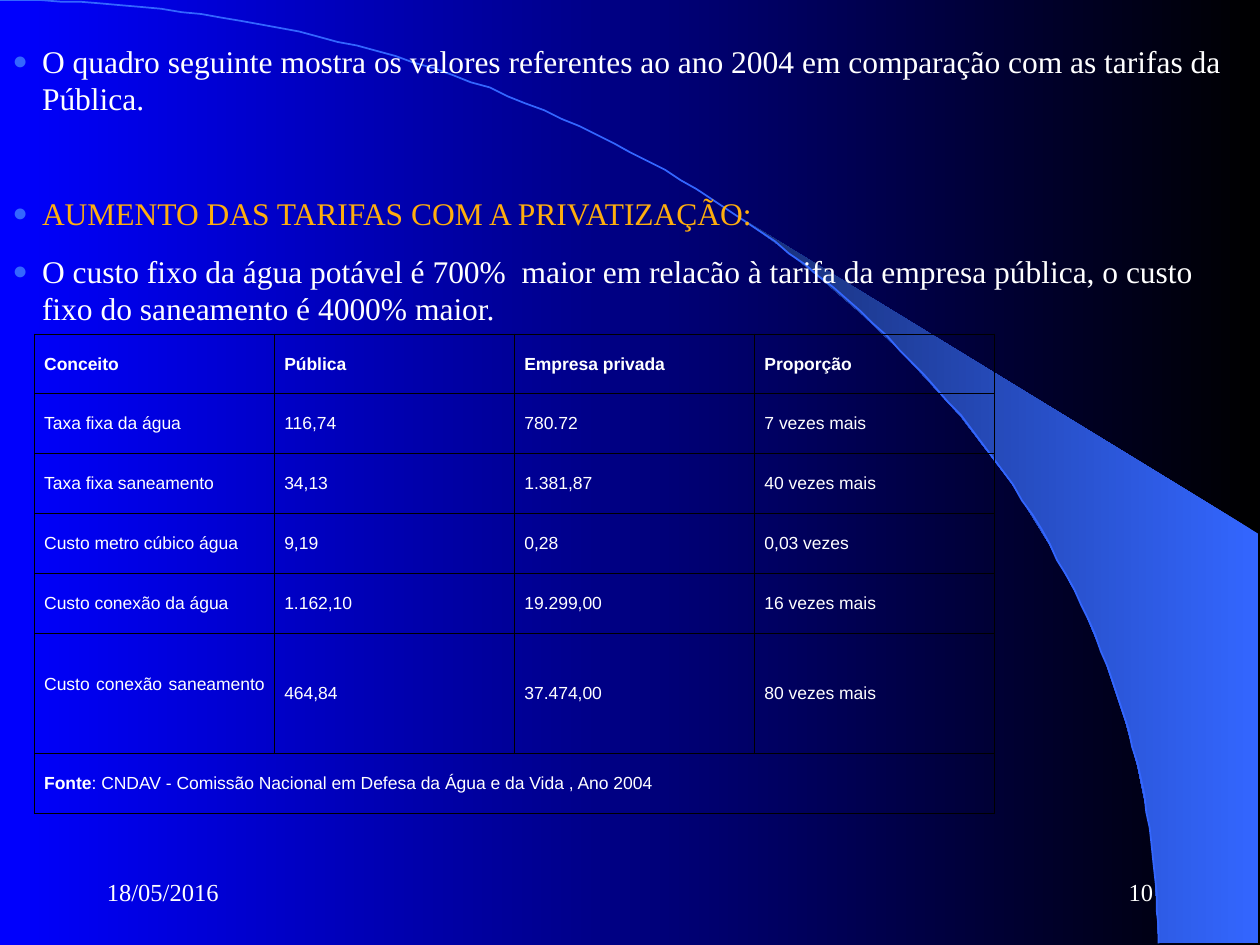
import math
from dataclasses import dataclass

import lxml.etree
import pptx
import pptx.dml.color
import pptx.enum.text
import pptx.oxml
import pptx.oxml.ns
import pptx.util

Pt = pptx.util.Pt
Align = pptx.enum.text.PP_ALIGN
Anchor = pptx.enum.text.MSO_ANCHOR
qn = pptx.oxml.ns.qn

WIDTH, HEIGHT = 720, 540
WHITE, BLACK, BLUE, ORANGE = "FFFFFF", "000000", "3366FF", "FFAE0D"
SERIF, SANS = "Times New Roman", "Arial"


@dataclass
class Bullet:
    text: str
    color: str = WHITE
    space_before: float = 11.2


@dataclass
class FooterText:
    text: str
    left: float
    alignment: Align


BULLETS = [
    Bullet("O quadro seguinte mostra os valores referentes ao ano 2004 em comparação "
           "com as tarifas da Pública."),
    Bullet("AUMENTO DAS TARIFAS COM A PRIVATIZAÇÃO:", ORANGE, 44),
    Bullet("O custo fixo da água potável é 700%  maior em relacão à tarifa da empresa "
           "pública, o custo fixo do saneamento é 4000% maior."),
]
FOOTERS = [
    FooterText("18/05/2016", 54, Align.LEFT),
    FooterText("10", 516, Align.RIGHT),
]
TARIFFS = [
    ("Conceito", "Pública", "Empresa privada", "Proporção"),
    ("Taxa fixa da água", "116,74", "780.72", "7 vezes mais"),
    ("Taxa fixa saneamento", "34,13", "1.381,87", "40 vezes mais"),
    ("Custo metro cúbico água", "9,19", "0,28", "0,03 vezes"),
    ("Custo conexão da água", "1.162,10", "19.299,00", "16 vezes mais"),
    ("Custo conexão saneamento\v", "464,84", "37.474,00", "80 vezes mais"),
]
SOURCE_LABEL = "Fonte"
SOURCE_TEXT = ": CNDAV - Comissão Nacional em Defesa da Água e da Vida , Ano 2004"
COLUMN_WIDTH, ROW_HEIGHT = 137.2, 34.29

ARC_RADIUS_X, ARC_RADIUS_Y = 661.7, 538.6
BEAM_POINTS = [
    (662.4, 538.6), (718.6, 538.6), (718.6, 304.6), (424.1, 124.6), (449.3, 143.3),
    (470.2, 159.8), (493.2, 180), (515.5, 201.6), (548.6, 237.6), (578.2, 276.5),
    (599, 310.3), (617.8, 344.9), (632.2, 379.4), (643, 411.8), (650.2, 438.5),
    (656.6, 471.6), (660.2, 501.1),
]


def rgb(color: str) -> pptx.dml.color.RGBColor:
    return pptx.dml.color.RGBColor.from_string(color)


def set_attributes(target, **values) -> None:
    for name, value in values.items():
        setattr(target, name, value)


def format_font(font, name: str, size: float, color: str, bold: bool = False) -> None:
    set_attributes(font, name=name, size=Pt(size), bold=bold)
    font.color.rgb = rgb(color)


def fill_gradient(fill, right_color: str, left_color: str) -> None:
    fill.gradient()
    fill.gradient_angle = 180
    for stop, color in zip(fill.gradient_stops, (right_color, left_color)):
        stop.color.rgb = rgb(color)


def draw_outline(slide, points: list, close: bool):
    builder = slide.shapes.build_freeform(*points[0], scale=Pt(1))
    builder.add_line_segments(points[1:], close=close)
    shape = builder.convert_to_shape()
    shape.shadow.inherit = False
    return shape


def draw_backdrop(slide) -> None:
    fill_gradient(slide.background.fill, BLACK, "0000FF")
    beam = draw_outline(slide, BEAM_POINTS, close=True)
    fill_gradient(beam.fill, BLUE, "182F76")
    beam.line.fill.background()

    angles = [math.radians(degree) for degree in range(91)]
    arc_points = [(ARC_RADIUS_X * math.sin(angle), ARC_RADIUS_Y * (1 - math.cos(angle)))
                  for angle in angles]
    arc = draw_outline(slide, arc_points, close=False)
    arc.fill.background()
    arc.line.width = Pt(1)
    arc.line.color.rgb = rgb(BLUE)


def add_bullet_mark(paragraph) -> None:
    properties = paragraph._p.get_or_add_pPr()
    indent = Pt(16.8)
    properties.set("marL", str(indent))
    properties.set("indent", str(-indent))
    color = lxml.etree.SubElement(properties, qn("a:buClr"))
    lxml.etree.SubElement(color, qn("a:srgbClr"), val=BLUE)
    lxml.etree.SubElement(properties, qn("a:buSzPct"), val="80000")
    lxml.etree.SubElement(properties, qn("a:buFont"), typeface=SERIF)
    lxml.etree.SubElement(properties, qn("a:buChar"), char="●")


def fill_body(slide, body) -> None:
    slide.shapes._spTree.append(body._element)  # in front of the backdrop
    set_attributes(body, left=Pt(0), top=Pt(20.2), width=Pt(705.6), height=Pt(203.8))
    frame = body.text_frame
    set_attributes(frame, word_wrap=True, vertical_anchor=Anchor.TOP,
                   auto_size=pptx.enum.text.MSO_AUTO_SIZE.NONE)
    for index, bullet in enumerate(BULLETS):
        paragraph = frame.add_paragraph() if index else frame.paragraphs[0]
        set_attributes(paragraph, space_before=Pt(bullet.space_before), line_spacing=1.0)
        add_bullet_mark(paragraph)
        run = paragraph.add_run()
        run.text = bullet.text
        format_font(run.font, SERIF, 18, bullet.color)


def add_footer(slide, footer: FooterText) -> None:
    box = slide.shapes.add_textbox(Pt(footer.left), Pt(491.8), Pt(150), Pt(36))
    set_attributes(box.text_frame, word_wrap=True, vertical_anchor=Anchor.MIDDLE)
    paragraph = box.text_frame.paragraphs[0]
    set_attributes(paragraph, text=footer.text, alignment=footer.alignment)
    format_font(paragraph.runs[0].font, SERIF, 14, WHITE)


def style_cell(cell) -> None:
    """Give the cell thin black borders, no fill and tight margins."""
    properties = cell._tc.get_or_add_tcPr()
    for side in ("a:lnL", "a:lnR", "a:lnT", "a:lnB"):
        line = lxml.etree.SubElement(properties, qn(side), w=str(Pt(0.23)))
        solid = lxml.etree.SubElement(line, qn("a:solidFill"))
        lxml.etree.SubElement(solid, qn("a:srgbClr"), val=BLACK)
    cell.fill.background()
    set_attributes(cell, margin_left=Pt(5.67), margin_right=Pt(5.67), margin_top=Pt(1.4),
                   margin_bottom=Pt(0), vertical_anchor=Anchor.MIDDLE)


def write_cell(cell, text: str, bold: bool) -> None:
    paragraph = cell.text_frame.paragraphs[0]
    set_attributes(paragraph, text=text, alignment=Align.JUSTIFY, line_spacing=0.87)
    format_font(paragraph.font, SANS, 10, WHITE)
    format_font(paragraph.runs[0].font, SANS, 10, WHITE, bold)


def add_tariff_table(slide) -> None:
    row_count, column_count = len(TARIFFS) + 1, len(TARIFFS[0])
    frame = slide.shapes.add_table(row_count, column_count, Pt(19.6), Pt(190.7),
                                   Pt(COLUMN_WIDTH * column_count),
                                   Pt(ROW_HEIGHT * (row_count + 1)))
    table = frame.table
    set_attributes(table, first_row=False, horz_banding=False)
    for column in table.columns:
        column.width = Pt(COLUMN_WIDTH)
    for row in table.rows:
        row.height = Pt(ROW_HEIGHT)
    table.rows[row_count - 2].height = Pt(2 * ROW_HEIGHT)
    for cell in table.iter_cells():
        style_cell(cell)
    for row_index, row_texts in enumerate(TARIFFS):
        for column_index, text in enumerate(row_texts):
            write_cell(table.cell(row_index, column_index), text, bold=row_index == 0)

    source = table.cell(row_count - 1, 0)
    source.merge(table.cell(row_count - 1, column_count - 1))
    write_cell(source, SOURCE_LABEL, bold=True)
    run = source.text_frame.paragraphs[0].add_run()
    run.text = SOURCE_TEXT
    format_font(run.font, SANS, 10, WHITE)


def main() -> None:
    presentation = pptx.Presentation()
    set_attributes(presentation, slide_width=Pt(WIDTH), slide_height=Pt(HEIGHT))
    slide = presentation.slides.add_slide(presentation.slide_layouts[1])
    title, body = slide.placeholders
    title._element.getparent().remove(title._element)
    draw_backdrop(slide)
    for footer in FOOTERS:
        add_footer(slide, footer)
    fill_body(slide, body)
    add_tariff_table(slide)
    presentation.save("out.pptx")


if __name__ == "__main__":
    main()
